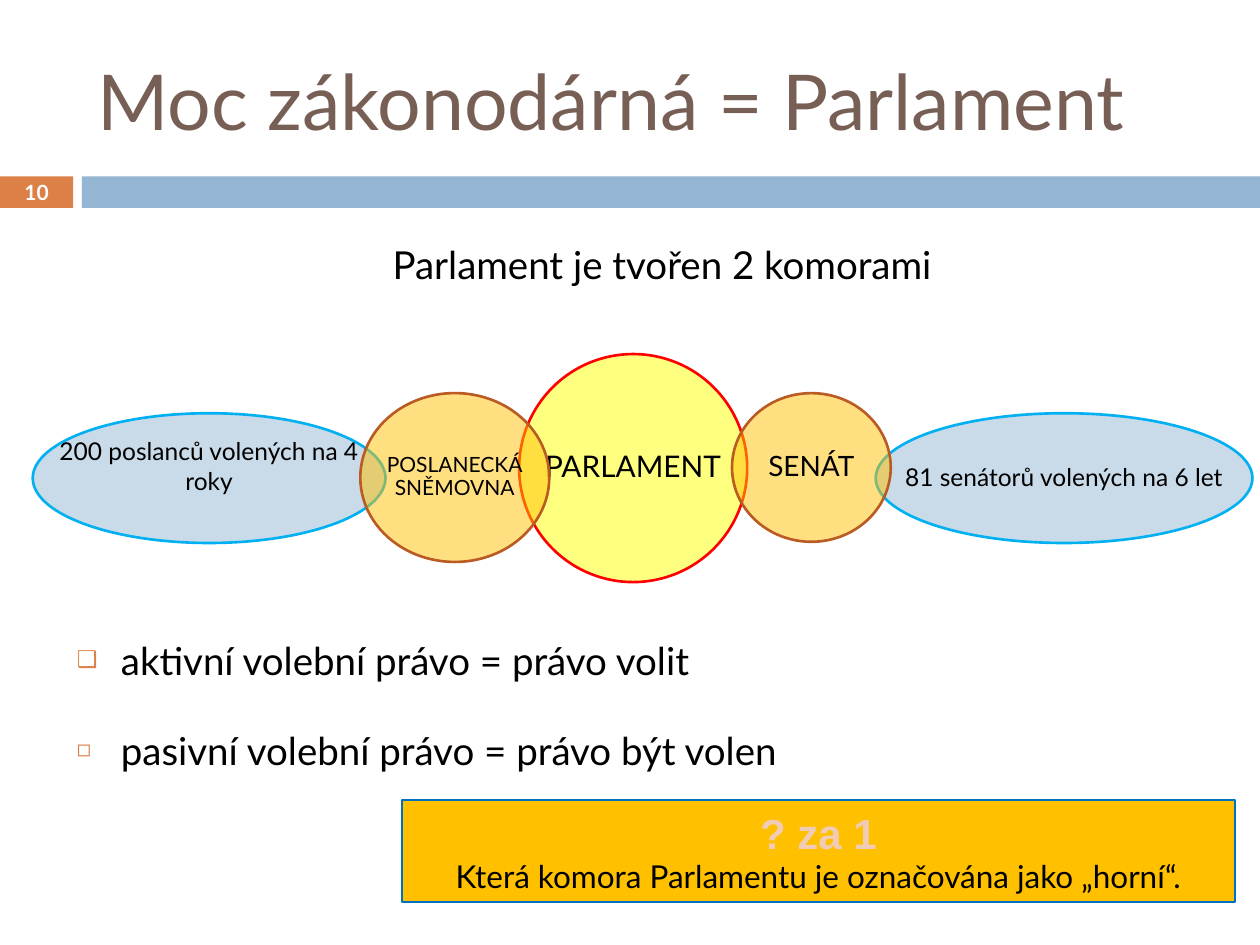
from pptx import Presentation
from pptx.dml.color import RGBColor
from pptx.enum.shapes import MSO_SHAPE
from pptx.enum.text import MSO_ANCHOR, MSO_AUTO_SIZE, PP_ALIGN
from pptx.oxml import parse_xml
from pptx.oxml.ns import qn
from pptx.util import Inches, Pt
from lxml import etree

NS = 'xmlns:a="http://schemas.openxmlformats.org/drawingml/2006/main"'
ORANGE, BLUE, RUST, GOLD = "DD8047", "94B6D2", "B95B22", "FFC000"


def paint(color, hue):
    color.rgb = RGBColor.from_string(hue)


def style(para, size, hue="000000", font="Lato", bold=False, align=PP_ALIGN.CENTER):
    para.alignment = align
    for run in para.runs:
        run.font.name, run.font.size, run.font.bold = font, Pt(size), bold
        paint(run.font.color, hue)


def place(shape, box):
    shape.left, shape.top, shape.width, shape.height = map(Inches, box)


def add(slide, kind, box, fill, line=None, width=1.0, alpha=None):
    shape = slide.shapes.add_shape(kind, *map(Inches, box))
    shape.shadow.inherit = False
    shape.fill.solid()
    paint(shape.fill.fore_color, fill)
    if alpha:
        tint = shape.fill._xPr.find(".//" + qn("a:srgbClr"))
        etree.SubElement(tint, qn("a:alpha"), val=str(alpha * 1000))
    if line:
        paint(shape.line.color, line)
        shape.line.width = Pt(width)
    else:
        shape.line.fill.background()
    shape.text_frame.vertical_anchor = MSO_ANCHOR.MIDDLE
    return shape


def inset(frame, size):
    frame.margin_left = frame.margin_right = Inches(size)
    frame.margin_top = frame.margin_bottom = Inches(size)


def bullet(para, sign=None):
    prop = para._p.get_or_add_pPr()
    prop.set("marL", str(Inches(0.35)))
    prop.set("indent", str(-Inches(0.35)))
    if not sign:
        prop.append(parse_xml(f"<a:buNone {NS}/>"))
        return
    prop.append(parse_xml(f'<a:buClr {NS}><a:srgbClr val="{ORANGE}"/></a:buClr>'))
    prop.append(parse_xml(f'<a:buSzPct {NS} val="60000"/>'))
    prop.append(parse_xml(f'<a:buChar {NS} char="{sign}"/>'))


def header(slide, box):
    left, top, width, height = box
    # Title
    title = slide.shapes.title
    place(title, (left + 0.67, top + 0.25, 8.92, 1.08))
    frame = title.text_frame
    frame.text = "Moc zákonodárná = Parlament"
    frame.auto_size = MSO_AUTO_SIZE.NONE
    frame.vertical_anchor = MSO_ANCHOR.MIDDLE
    style(frame.paragraphs[0], 44, "775F55", align=PP_ALIGN.LEFT)
    # Page number and band
    bar = top + height - 0.25
    page = add(slide, MSO_SHAPE.RECTANGLE, (left, bar, 0.58, 0.25), ORANGE)
    inset(page.text_frame, 0)
    page.text_frame.text = "10"
    style(page.text_frame.paragraphs[0], 12, "FFFFFF", bold=True)
    add(slide, MSO_SHAPE.RECTANGLE, (left + 0.65, bar, width - 0.65, 0.25), BLUE)


def body(slide, box):
    # Lead line, a gap for the diagram, then two bullets
    rows = [
        ("Parlament je tvořen 2 komorami", None, PP_ALIGN.CENTER, 7),
        ("aktivní volební právo = právo volit", "❑", PP_ALIGN.LEFT, 200),
        ("pasivní volební právo = právo být volen", "◻", PP_ALIGN.LEFT, 25),
    ]
    holder = slide.placeholders[1]
    place(holder, box)
    frame = holder.text_frame
    frame.text = "\n".join(row[0] for row in rows)
    frame.auto_size = MSO_AUTO_SIZE.NONE
    for para, (_, sign, align, gap) in zip(frame.paragraphs, rows):
        style(para, 22, align=align)
        para.space_before = Pt(gap)
        bullet(para, sign)


def diagram(slide, box):
    # Text, size, offset and size of the oval, fill, line, line spacing, lift
    left, top = box[:2]
    ovals = [
        ("PARLAMENT", 17, (3.86, 0, 1.81, 1.81), "FFFF00", "FF0000", 0.9, 0),
        ("81 senátorů volených na 6 let", 14, (6.69, 0.47, 2.99, 1.03), BLUE, "00B0F0", 0.9, 0),
        ("SENÁT", 16, (5.55, 0.31, 1.26, 1.18), GOLD, RUST, 0.9, 0),
        ("200 poslanců volených na 4\vroky", 14, (0, 0.47, 2.8, 1.03), BLUE, "00B0F0", 1.0, 0.1),
        ("POSLANECKÁ\vSNĚMOVNA", 12, (2.6, 0.31, 1.5, 1.34), GOLD, RUST, 0.9, 0),
    ]
    for text, size, (x, y, w, h), fill, line, gap, lift in ovals:
        oval = add(slide, MSO_SHAPE.OVAL, (left + x, top + y, w, h), fill, line, 1.5, 50)
        frame = oval.text_frame
        frame.word_wrap = False
        inset(frame, 0.02)
        frame.margin_bottom = Inches(0.02 + 2 * lift)
        frame.text = text
        style(frame.paragraphs[0], size)
        frame.paragraphs[0].line_spacing = gap


def quiz(slide, box):
    card = add(slide, MSO_SHAPE.RECTANGLE, box, GOLD, "0070C0")
    frame = card.text_frame
    frame.text = "? za 1\nKterá komora Parlamentu je označována jako „horní“."
    head, ask = frame.paragraphs
    style(head, 24, "F1CCB5", "Arial", True)
    style(ask, 18)
    # Outlined letters
    edge = parse_xml(
        f'<a:ln {NS} w="{Pt(1.42)}"><a:solidFill><a:srgbClr val="{RUST}"/>'
        "</a:solidFill></a:ln>")
    head.runs[0].font._element.insert(0, edge)


def main():
    deck = Presentation()
    deck.slide_width, deck.slide_height = Inches(10), Inches(7.5)
    slide = deck.slides.add_slide(deck.slide_layouts[1])
    header(slide, (0, 0, 10, 1.65))
    body(slide, (0.51, 1.86, 9.49, 5.28))
    diagram(slide, (0.26, 2.81, 9.68, 1.81))
    quiz(slide, (3.19, 6.35, 6.61, 0.81))
    deck.save("out.pptx")


if __name__ == "__main__":
    main()
